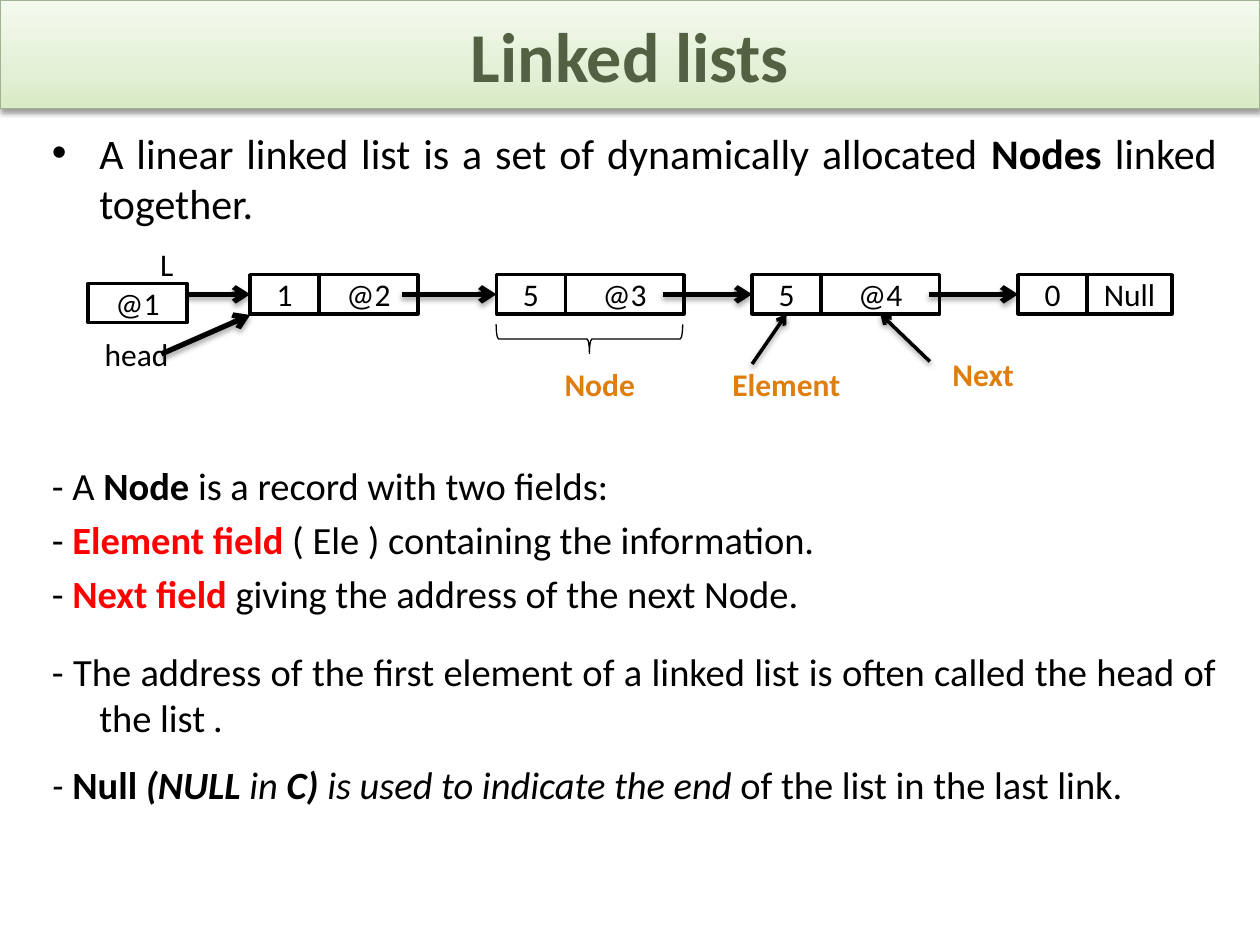
from lxml import etree
from pptx import Presentation
from pptx.dml.color import RGBColor
from pptx.enum.shapes import MSO_CONNECTOR, MSO_SHAPE
from pptx.enum.text import MSO_ANCHOR, MSO_AUTO_SIZE, PP_ALIGN
from pptx.oxml import parse_xml
from pptx.oxml.ns import qn
from pptx.util import Pt

RECT, BRACE = MSO_SHAPE.RECTANGLE, MSO_SHAPE.RIGHT_BRACE
STRAIGHT = MSO_CONNECTOR.STRAIGHT
MIDDLE, TOP = MSO_ANCHOR.MIDDLE, MSO_ANCHOR.TOP
CENTER, LEFT, JUSTIFY = PP_ALIGN.CENTER, PP_ALIGN.LEFT, PP_ALIGN.JUSTIFY
NO_FIT = MSO_AUTO_SIZE.NONE

BLACK = RGBColor(0x00, 0x00, 0x00)
WHITE = RGBColor(0xFF, 0xFF, 0xFF)
RED = RGBColor(0xFF, 0x00, 0x00)
ORANGE = RGBColor(0xDD, 0x7E, 0x0E)
TITLE_TEXT = RGBColor(0x53, 0x61, 0x42)
TITLE_LINE = RGBColor(0xA1, 0xB2, 0x8E)
TITLE_STOPS = [(0, RGBColor(0xD9, 0xEA, 0xC6)),
               (35, RGBColor(0xE3, 0xF0, 0xD6)),
               (100, RGBColor(0xF4, 0xFA, 0xEF))]

FONT = "Calibri"
DRAWING_NS = "http://schemas.openxmlformats.org/drawingml/2006/main"
LEFT_SIDE, BOTTOM_SIDE = 1, 2

# Node row geometry, in points
ROW_TOP, BOX_H, ELE_W = 157, 22.4, 39.4
ROW_MID = ROW_TOP + BOX_H / 2
# left, element, next address, width of the next field, start of the outgoing arrow
NODES = [(143, "1", "@2", 56.4, 229.7),
         (283.7, "5", "@3", 67.7, 378.7),
         (429.8, "5", "@4", 67.7, 530.6),
         (581.8, "0", "Null", 48.4, None)]

# size, space before, alignment, runs of (text, style, colour)
BODY = [
    (24, 0, JUSTIFY, [("A linear linked list is a set of dynamically allocated ", "", BLACK),
                      ("Nodes ", "b", BLACK), ("linked together.", "", BLACK)]),
    (22, 134, JUSTIFY, [("- A ", "", BLACK), ("Node ", "b", BLACK),
                        ("is a record with two fields:", "", BLACK)]),
    (22, 4.4, LEFT, [("- ", "", BLACK), ("Element field ", "b", RED),
                     ("( Ele ) containing the information.", "", BLACK)]),
    (22, 4.4, LEFT, [("- ", "", BLACK), ("Next field ", "b", RED),
                     ("giving the address of the next Node.", "", BLACK)]),
    (22, 18, JUSTIFY, [("- The address of the first element of a linked list is often "
                        "called the head of the list ", "", BLACK), (".", "i", BLACK)]),
    (22, 12, JUSTIFY, [("- ", "i", BLACK), ("Null ", "b", BLACK), ("(NULL ", "bi", BLACK),
                       ("in ", "i", BLACK), ("C) ", "bi", BLACK),
                       ("is used to indicate the end ", "i", BLACK),
                       ("of the list in the last link.", "", BLACK)]),
]


def place(s, left, top, width, height):
    s.left, s.top, s.width, s.height = Pt(left), Pt(top), Pt(width), Pt(height)


def add_run(p, text, size, color, style=""):
    r = p.add_run()
    r.text = text
    font = r.font
    font.name, font.size = FONT, Pt(size)
    font.bold, font.italic = "b" in style, "i" in style
    font.color.rgb = color


def add_shadow(s, alpha, dist):
    s._element.spPr.append(parse_xml(
        f'<a:effectLst xmlns:a="{DRAWING_NS}">'
        f'<a:outerShdw blurRad="{Pt(3.1)}" dist="{Pt(dist)}" dir="5400000" rotWithShape="0">'
        f'<a:srgbClr val="000000"><a:alpha val="{alpha * 1000}"/></a:srgbClr>'
        '</a:outerShdw></a:effectLst>'))


def center_text(s, text, style="", color=BLACK):
    tf = s.text_frame
    tf.margin_left = tf.margin_right = tf.margin_top = tf.margin_bottom = 0
    tf.word_wrap = True
    tf.vertical_anchor = MIDDLE
    p = tf.paragraphs[0]
    p.alignment = CENTER
    add_run(p, text, 18, color, style)


def add_box(shapes, text, left, top, width, outlined=True):
    s = shapes.add_shape(RECT, Pt(left), Pt(top), Pt(width), Pt(BOX_H))
    s.shadow.inherit = False
    s.fill.solid()
    s.fill.fore_color.rgb = WHITE
    if outlined:
        s.line.color.rgb = BLACK
        s.line.width = Pt(2)
    else:
        s.line.fill.background()
    center_text(s, text)
    return s


def add_label(shapes, text, left, top, width, style="b", color=ORANGE):
    s = shapes.add_textbox(Pt(left), Pt(top), Pt(width), Pt(BOX_H))
    center_text(s, text, style, color)


def add_arrow(shapes, start, end=(0, 0), width=3, target=None, side=LEFT_SIDE):
    s = shapes.add_connector(STRAIGHT, *(Pt(v) for v in (*start, *end)))
    if target is not None:
        s.end_connect(target, side)
    s.line.color.rgb = BLACK
    s.line.width = Pt(width)
    etree.SubElement(s.line._get_or_add_ln(), qn("a:tailEnd"), type="arrow")
    add_shadow(s, 35, 1.8)


def add_title(slide):
    s = slide.shapes.title
    place(s, 0, 0, 720, 62)
    s.fill.gradient()
    s.fill.gradient_angle = 90
    stops = s._element.spPr.find(".//" + qn("a:gsLst"))
    for stop in list(stops):
        stops.remove(stop)
    for pos, color in TITLE_STOPS:
        stop = etree.SubElement(stops, qn("a:gs"), pos=str(pos * 1000))
        etree.SubElement(stop, qn("a:srgbClr"), val=str(color))
    s.line.color.rgb = TITLE_LINE
    s.line.width = Pt(0.75)
    add_shadow(s, 38, 1.6)
    tf = s.text_frame
    tf.auto_size = NO_FIT
    tf.vertical_anchor = MIDDLE
    p = tf.paragraphs[0]
    p.alignment = CENTER
    add_run(p, "Linked lists", 40, TITLE_TEXT, "b")


def add_body(slide):
    s = slide.placeholders[1]
    place(s, 22.5, 69, 680, 450)
    tf = s.text_frame
    tf.auto_size = NO_FIT
    tf.vertical_anchor = TOP
    for i, (size, before, align, runs) in enumerate(BODY):
        p = tf.add_paragraph() if i else tf.paragraphs[0]
        p.alignment = align
        p.space_before = Pt(before)
        pPr = p._p.get_or_add_pPr()
        pPr.set("marL", str(Pt(27)))
        pPr.set("indent", str(-Pt(27)))
        if i:
            etree.SubElement(pPr, qn("a:buNone"))
        else:
            etree.SubElement(pPr, qn("a:buFont"), typeface="Arial")
            etree.SubElement(pPr, qn("a:buChar"), char="•")
        for text, style, color in runs:
            add_run(p, text, size, color, style)


def add_diagram(shapes):
    # Nodes
    boxes = []
    for left, element, address, width, _ in NODES:
        boxes.append((add_box(shapes, element, left, ROW_TOP, ELE_W),
                      add_box(shapes, address, left + ELE_W, ROW_TOP, width)))

    # Links from each node to the next
    for node, (following, _) in zip(NODES, boxes[1:]):
        add_arrow(shapes, (node[4], ROW_MID), target=following)

    # List variable and head pointer
    first = boxes[0][0]
    add_box(shapes, "L", 75.6, 139.7, ELE_W, outlined=False)
    add_arrow(shapes, (103, ROW_MID), target=first)
    add_box(shapes, "@1", 50.4, 162, 56.4)
    add_arrow(shapes, (92.2, 202.3), (143, 180))
    add_label(shapes, "head", 36, 190.8, 84.2, "", BLACK)

    # Brace under the second node
    brace = shapes.add_shape(BRACE, Pt(328.5), Pt(140.4), Pt(16.6), Pt(106.6))
    brace.rotation = 90
    brace.shadow.inherit = False
    brace.fill.background()
    brace.line.color.rgb = BLACK
    brace.line.width = Pt(0.75)

    # Captions and their pointers
    for text, left, top in (("Node", 289.4, 208), ("Element", 396, 208), ("Next", 508.5, 202.3)):
        add_label(shapes, text, left, top, 106.6)
    element_box, next_box = boxes[2]
    add_arrow(shapes, (429.8, 208), width=2, target=element_box, side=BOTTOM_SIDE)
    add_arrow(shapes, (531.4, 206.6), width=2, target=next_box, side=BOTTOM_SIDE)


def main():
    prs = Presentation()
    prs.slide_width, prs.slide_height = Pt(720), Pt(540)
    slide = prs.slides.add_slide(prs.slide_layouts[1])
    add_title(slide)
    add_body(slide)
    add_diagram(slide.shapes)
    prs.save("out.pptx")


if __name__ == "__main__":
    main()
